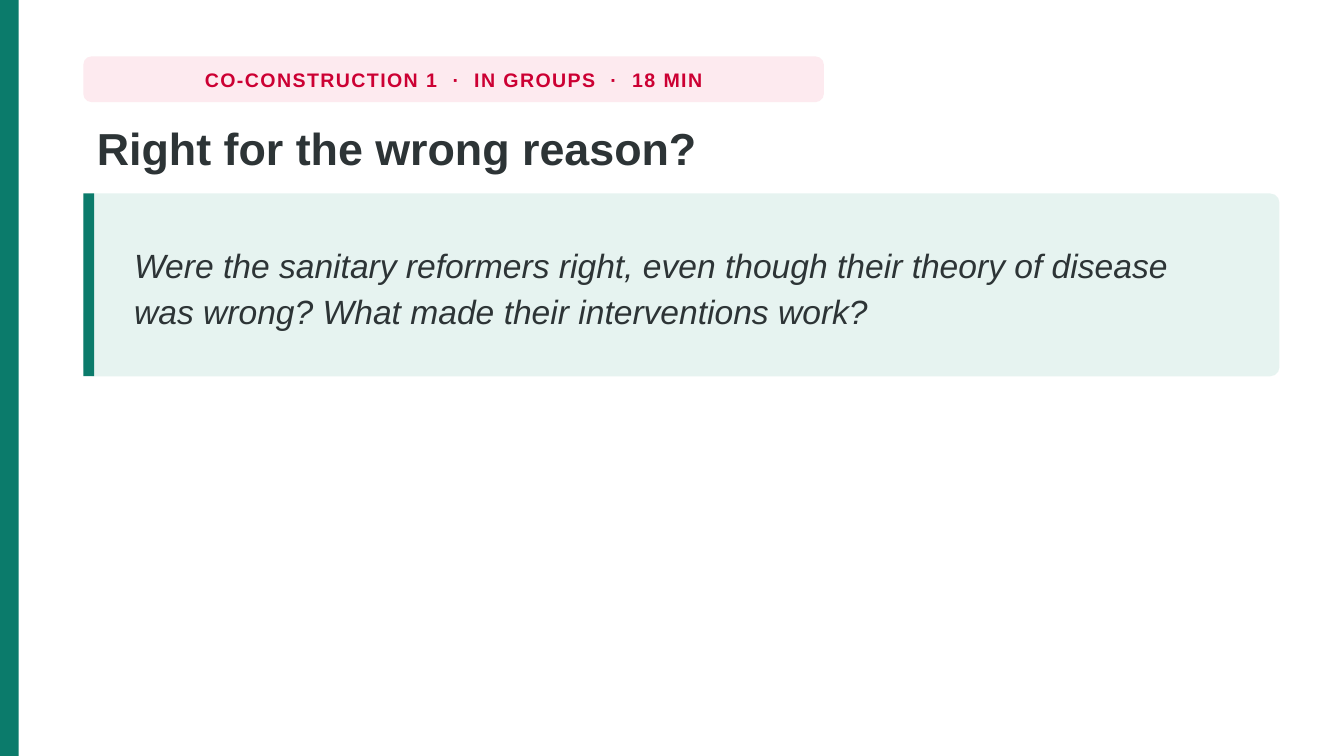
from dataclasses import dataclass
from typing import NamedTuple

from pptx import Presentation
from pptx.dml.color import RGBColor
from pptx.enum.shapes import MSO_SHAPE as Kind
from pptx.enum.text import MSO_ANCHOR as Anchor, MSO_AUTO_SIZE as Fit, PP_ALIGN as Align
from pptx.util import Inches, Pt


# Theme: colours, type sizes and spacing
@dataclass(frozen=True)
class Theme:
    font: str = "Arial"
    ink: str = "2D3436"
    green: str = "0B7B6B"
    mint: str = "E6F3F0"
    red: str = "CC0033"
    pink: str = "FDEAEF"
    tag: float = 10.5
    title: float = 24
    quote: float = 18
    track: int = 80  # hundredths of a point
    gap: int = 440


# Grid: 100 columns by 56.25 rows, a tenth of an inch each
class Box(NamedTuple):
    col: float
    row: float
    wide: float
    high: float

    def inset(self, left: float, top: float, right: float) -> "Box":
        return Box(self.col + left, self.row + top,
                   self.wide - left - right, self.high - 2 * top)


@dataclass(frozen=True)
class Panel:
    box: Box
    fill: str
    round: float = 0


def unit(cells: float) -> int:
    return Inches(cells / 10)


def place(box: Box) -> list[int]:
    return [unit(cells) for cells in box]


def colour(code: str) -> RGBColor:
    return RGBColor.from_string(code)


def draw(slide, panel: Panel) -> None:
    kind = Kind.ROUNDED_RECTANGLE if panel.round else Kind.RECTANGLE
    shape = slide.shapes.add_shape(kind, *place(panel.box))
    shape.shadow.inherit = False
    shape.fill.solid()
    shape.fill.fore_color.rgb = colour(panel.fill)
    shape.line.fill.background()
    if panel.round:
        shape.adjustments[0] = panel.round


def write(shape, parts: list[tuple[str, int]], code: str, look: dict,
          para: dict, frame: dict) -> None:
    """Set each (text, tracking) part as a run of one paragraph."""
    text = shape.text_frame
    for name, value in {"auto_size": Fit.NONE, "word_wrap": True, **frame}.items():
        setattr(text, name, value)
    line = text.paragraphs[0]
    for name, value in para.items():
        setattr(line, name, value)
    for words, track in parts:
        run = line.add_run()
        run.text = words
        for name, value in {"name": theme.font, **look}.items():
            setattr(run.font, name, value)
        run.font.color.rgb = colour(code)
        if track:
            run.font._element.set("spc", str(track))


theme = Theme()
WIDE, HIGH, LEFT, SPAN = 100, 56.25, 6.2, 89
tag = Box(LEFT, 4.2, 55.1, 3.4)
head = Box(LEFT, 8.4, SPAN, 5.6)
card = Box(LEFT, 14.4, SPAN, 13.6)

deck = Presentation()
deck.slide_width, deck.slide_height = unit(WIDE), unit(HIGH)
slide = deck.slides.add_slide(deck.slide_layouts[5])

# Side band, tag and question card with its accent
for panel in (
    Panel(Box(0, 0, 1.4, HIGH), theme.green),
    Panel(tag, theme.pink, 0.18),
    Panel(card, theme.mint, 0.05),
    Panel(card._replace(wide=0.8), theme.green),
):
    draw(slide, panel)

# Tag line: wider tracking opens the gaps around each dot
dot = (" ·", theme.gap)
write(slide.shapes.add_textbox(*place(tag)),
      [("CO-CONSTRUCTION 1", theme.track), dot,
       (" IN GROUPS", theme.track), dot, (" 18 MIN", theme.track)],
      theme.red, {"size": Pt(theme.tag), "bold": True},
      {"alignment": Align.CENTER},
      {"vertical_anchor": Anchor.MIDDLE, "word_wrap": False})

# Title
title = slide.shapes.title
title.left, title.top, title.width, title.height = place(head)
write(title, [("Right for the wrong reason?", 0)], theme.ink,
      {"size": Pt(theme.title), "bold": True},
      {"alignment": Align.LEFT, "line_spacing": 1.02},
      {"vertical_anchor": Anchor.TOP})

# Question
write(slide.shapes.add_textbox(*place(card.inset(2.8, 0.5, 2.7))),
      [("Were the sanitary reformers right, even though their theory of disease "
        "was wrong? What made their interventions work?", 0)],
      theme.ink, {"size": Pt(theme.quote), "italic": True},
      {"line_spacing": 1.16}, {"vertical_anchor": Anchor.MIDDLE})

deck.save("out.pptx")
